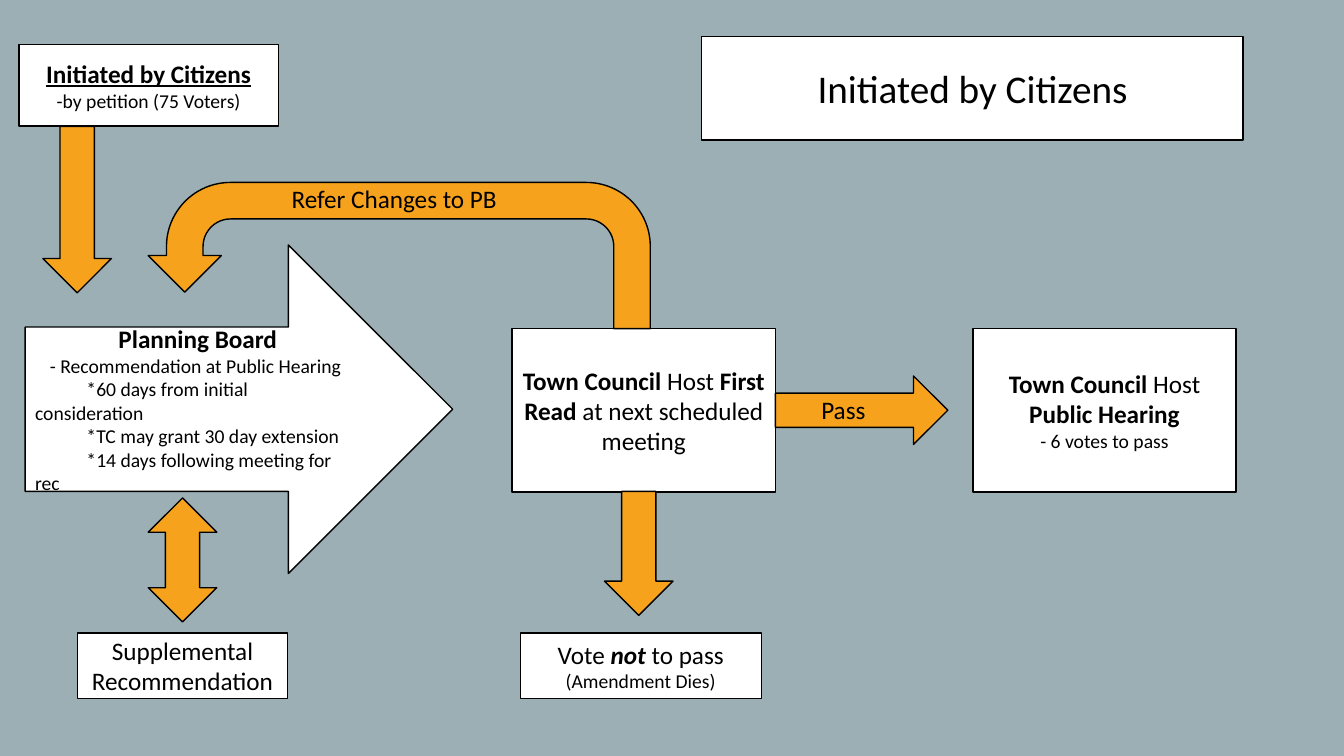
from pptx import Presentation
from pptx.dml.color import RGBColor
from pptx.enum.shapes import MSO_SHAPE as Shape
from pptx.enum.text import MSO_ANCHOR as Anchor, MSO_AUTO_SIZE as AutoSize, PP_ALIGN as Align
from pptx.util import Inches, Pt

COLORS = {"background": "9BAFB5", "box": "FFFFFF", "arrow": "F6A21D", "ink": "000000"}
FONT = "Calibri"
HEADING, DETAIL, TITLE = 18, 14, 28


def color(name):
    return RGBColor.from_string(COLORS[name])


class FlowSlide:
    def __init__(self, presentation):
        self.slide = presentation.slides.add_slide(presentation.slide_layouts[6])
        fill = self.slide.background.fill
        fill.solid()
        fill.fore_color.rgb = color("background")

    def outline(self, kind, bounds, fill):
        shape = self.slide.shapes.add_shape(kind, *map(Inches, bounds))
        shape.shadow.inherit = False
        shape.fill.solid()
        shape.fill.fore_color.rgb = color(fill)
        shape.line.color.rgb = color("ink")
        shape.line.width = Pt(1)
        return shape

    def fill_text(self, frame, paragraphs):
        frame.word_wrap = True
        for index, (size, runs, *indent) in enumerate(paragraphs):
            paragraph = frame.add_paragraph() if index else frame.paragraphs[0]
            paragraph.alignment = Align.LEFT if indent else Align.CENTER
            if indent:
                properties = paragraph._p.get_or_add_pPr()
                properties.set("marL", "0")
                properties.set("indent", str(Inches(indent[0])))
            paragraph.font.size = Pt(size)
            paragraph.font.name = FONT
            paragraph.font.color.rgb = color("ink")
            for text, style in runs:
                run = paragraph.add_run()
                run.text = text
                run.font.bold = "b" in style
                run.font.italic = "i" in style
                run.font.underline = "u" in style

    def box(self, bounds, paragraphs, kind=Shape.RECTANGLE):
        frame = self.outline(kind, bounds, "box").text_frame
        frame.vertical_anchor = Anchor.MIDDLE
        self.fill_text(frame, paragraphs)

    def arrow(self, bounds, kind=Shape.RIGHT_ARROW, rotation=0, mirrored=False):
        shape = self.outline(kind, bounds, "arrow")
        shape.rotation = rotation
        if mirrored:
            shape._element.spPr.xfrm.set("flipH", "1")

    def label(self, bounds, text):
        frame = self.slide.shapes.add_textbox(*map(Inches, bounds)).text_frame
        self.fill_text(frame, [(HEADING, [(text, "")])])
        frame.auto_size = AutoSize.SHAPE_TO_FIT_TEXT


def main():
    presentation = Presentation()
    presentation.slide_width = Inches(13.33)
    presentation.slide_height = Inches(7.5)
    flow = FlowSlide(presentation)

    deadlines = [
        "*60 days from initial consideration",
        "*TC may grant 30 day extension",
        "*14 days following meeting for rec",
    ]
    flow.box((0.25, 2.43, 4.24, 3.26), [
        (HEADING, [("Planning Board", "b")]),
        (DETAIL, [("- Recommendation at Public Hearing ", "")]),
        *[(DETAIL, [(deadline, "")], 0.51) for deadline in deadlines],
    ], Shape.RIGHT_ARROW)
    flow.box((5.08, 3.26, 2.61, 1.62), [
        (HEADING, [("Town Council ", "b"), ("Host ", ""), ("First Read ", "b"),
                   ("at next scheduled meeting", "")]),
    ])
    flow.arrow((1.47, 1.81, 4.98, 1.45), Shape.U_TURN_ARROW, mirrored=True)
    flow.arrow((7.69, 3.73, 1.71, 0.68))
    flow.box((9.65, 3.26, 2.61, 1.62), [
        (HEADING, [("Town Council ", "b"), ("Host ", ""), ("Public Hearing", "b")]),
        (DETAIL, [("- 6 votes to pass", "")]),
    ])
    flow.arrow((1.47, 4.94, 0.68, 1.23), Shape.UP_DOWN_ARROW, rotation=180)
    flow.box((0.77, 6.28, 2.08, 0.65), [(HEADING, [("Supplemental Recommendation", "")])])
    flow.arrow((5.72, 5.15, 1.23, 0.68), rotation=90)
    flow.box((5.16, 6.28, 2.39, 0.65), [
        (HEADING, [("Vote ", ""), ("not ", "bi"), ("to pass", "")]),
        (DETAIL, [("(Amendment Dies)", "")]),
    ])
    flow.label((2.75, 1.77, 2.32, 0.4), "Refer Changes to PB")
    flow.label((7.35, 3.86, 2.03, 0.4), "Pass")
    flow.arrow((-0.06, 1.74, 1.65, 0.68), rotation=90)
    flow.box((0.19, 0.44, 2.57, 0.81), [
        (HEADING, [("Initiated by Citizens", "bu")]),
        (DETAIL, [("-by petition (75 Voters)", "")]),
    ])
    flow.box((6.96, 0.36, 5.37, 1.03), [(TITLE, [("Initiated by Citizens", "")])])

    presentation.save("out.pptx")


if __name__ == "__main__":
    main()
